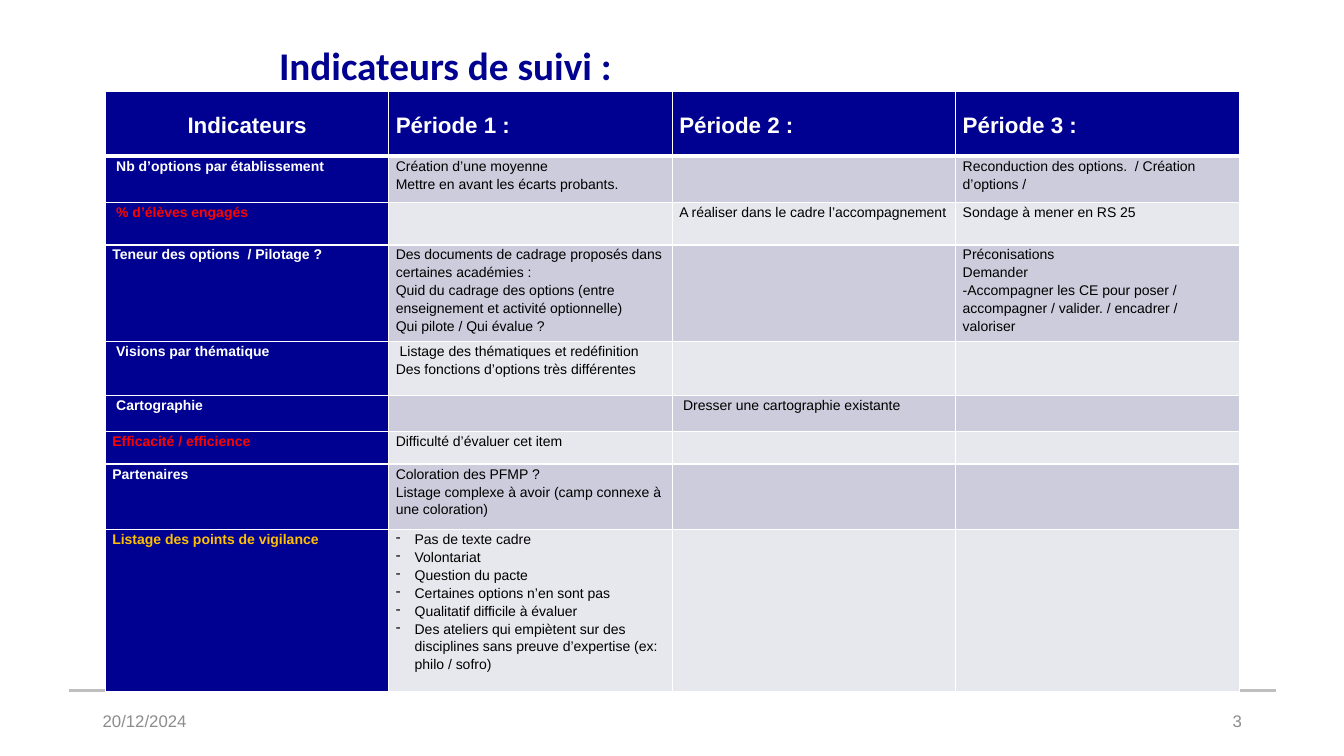
from dataclasses import dataclass

from lxml import etree
from pptx import Presentation
from pptx.dml.color import RGBColor
from pptx.enum import shapes, text
from pptx.oxml import ns
from pptx.util import Pt


@dataclass(frozen=True)
class Theme:
    """Colours, fonts and type sizes of the slide."""
    navy: str = "000091"
    white: str = "FFFFFF"
    black: str = "000000"
    red: str = "FF0000"
    amber: str = "FFC000"
    grey: str = "8C8C8C"
    rule: str = "BFBFBF"
    bands: tuple = ("CCCCDC", "E7E7EE")
    heading: str = "Calibri"
    body: str = "Arial"
    title_size: int = 28
    header_size: int = 16
    footer_size: int = 12
    cell_size: int = 10


THEME = Theme()
LEFT, CENTER, RIGHT = text.PP_ALIGN.LEFT, text.PP_ALIGN.CENTER, text.PP_ALIGN.RIGHT
TOP, MIDDLE = text.MSO_ANCHOR.TOP, text.MSO_ANCHOR.MIDDLE
COLUMN_WIDTH = 202.5
HEADERS = ["Indicateurs", "Période 1 :", "Période 2 :", "Période 3 :"]
HEADER_HEIGHT = 46
ROWS = [
    (33, THEME.white, " Nb d’options par établissement",
     {1: ["Création d’une moyenne", "Mettre en avant les écarts probants."],
      3: ["Reconduction des options.  / Création d’options /"]}),
    (30.5, THEME.red, " % d’élèves engagés",
     {2: ["A réaliser dans le cadre l’accompagnement"],
      3: ["Sondage à mener en RS 25"]}),
    (64, THEME.white, "Teneur des options  / Pilotage ?",
     {1: ["Des documents de cadrage proposés dans certaines académies :",
          "Quid du cadrage des options (entre enseignement et activité optionnelle)",
          "Qui pilote / Qui évalue ?"],
      3: ["Préconisations", "Demander",
          "-Accompagner les CE pour poser / accompagner / valider. / encadrer / valoriser"]}),
    (38.5, THEME.white, " Visions par thématique",
     {1: [" Listage des thématiques et redéfinition",
          "Des fonctions d’options très différentes"]}),
    (26, THEME.white, " Cartographie", {2: [" Dresser une cartographie existante"]}),
    (23, THEME.red, "Efficacité / efficience", {1: ["Difficulté d’évaluer cet item"]}),
    (46.5, THEME.white, "Partenaires",
     {1: ["Coloration des PFMP ?",
          "Listage complexe à avoir (camp connexe à une coloration)"]}),
    (116, THEME.amber, "Listage des points de vigilance",
     {1: ["Pas de texte cadre", "Volontariat", "Question du pacte",
          "Certaines options n’en sont pas", "Qualitatif difficile à évaluer",
          "Des ateliers qui empiètent sur des disciplines sans preuve d’expertise "
          "(ex: philo / sofro)"]}),
]


def add_bullet(para):
    """Give a paragraph a hanging dash."""
    properties = para._p.get_or_add_pPr()
    properties.set("marL", str(Pt(13.5)))
    properties.set("indent", str(-Pt(13.5)))
    etree.SubElement(properties, ns.qn("a:buChar")).set("char", "-")


def write(frame, lines, size, color, font=THEME.body, bold=False, align=LEFT,
          spacing=1.0, bullets=False):
    """Fill a text frame with one paragraph per line."""
    for index, line in enumerate(lines):
        para = frame.add_paragraph() if index else frame.paragraphs[0]
        para.text = line
        para.alignment = align
        para.line_spacing = spacing
        if bullets:
            add_bullet(para)
        para.font.name = font
        para.font.size = Pt(size)
        para.font.bold = bold
        para.font.color.rgb = RGBColor.from_string(color)


def add_text(page, left, top, width, height, line, size, color, **style):
    """Add a vertically centred one-line text box."""
    box = page.shapes.add_textbox(Pt(left), Pt(top), Pt(width), Pt(height))
    box.text_frame.word_wrap = True
    box.text_frame.vertical_anchor = MIDDLE
    write(box.text_frame, [line], size, color, **style)


def add_rule(page, left, right, y):
    """Draw the grey line above the footer."""
    rule = page.shapes.add_connector(
        shapes.MSO_CONNECTOR.STRAIGHT, Pt(left), Pt(y), Pt(right), Pt(y))
    rule.line.color.rgb = RGBColor.from_string(THEME.rule)
    rule.line.width = Pt(2.25)
    etree.SubElement(rule._element.spPr, ns.qn("a:effectLst"))


def style_cell(cell, fill, anchor=TOP, bottom=1):
    """Set the margins, white borders and fill of a cell."""
    cell.margin_left = cell.margin_right = Pt(5)
    cell.margin_top = cell.margin_bottom = Pt(0)
    cell.vertical_anchor = anchor
    properties = cell._tc.get_or_add_tcPr()
    for side, width in (("L", 1), ("R", 1), ("T", 1), ("B", bottom)):
        border = etree.SubElement(properties, ns.qn(f"a:ln{side}"), w=str(Pt(width)))
        paint = etree.SubElement(border, ns.qn("a:solidFill"))
        etree.SubElement(paint, ns.qn("a:srgbClr"), val=THEME.white)
    cell.fill.solid()
    cell.fill.fore_color.rgb = RGBColor.from_string(fill)


def add_indicators(page, left, top):
    """Add the table of indicators by period."""
    heights = [HEADER_HEIGHT] + [row[0] for row in ROWS]
    table = page.shapes.add_table(
        len(heights), len(HEADERS), Pt(left), Pt(top),
        Pt(COLUMN_WIDTH * len(HEADERS)), Pt(sum(heights))).table
    table.horz_banding = False
    for column in table.columns:
        column.width = Pt(COLUMN_WIDTH)
    for row, height in zip(table.rows, heights):
        row.height = Pt(height)
    for column, header in enumerate(HEADERS):
        cell = table.cell(0, column)
        style_cell(cell, THEME.navy, MIDDLE, bottom=3)
        write(cell.text_frame, [header], THEME.header_size, THEME.white, bold=True,
              align=LEFT if column else CENTER, spacing=1.15)
    for index, (_, color, label, notes) in enumerate(ROWS):
        name = table.cell(index + 1, 0)
        style_cell(name, THEME.navy, bottom=1)
        write(name.text_frame, [label], THEME.cell_size, color, bold=True, spacing=1.15)
        for column in range(1, len(HEADERS)):
            cell = table.cell(index + 1, column)
            style_cell(cell, THEME.bands[index % 2])
            write(cell.text_frame, notes.get(column, [""]), THEME.cell_size, THEME.black,
                  spacing=1.15, bullets=index == len(ROWS) - 1 and column in notes)


def main():
    """Build the slide and save it."""
    deck = Presentation()
    deck.slide_width, deck.slide_height = Pt(960), Pt(540)
    page = deck.slides.add_slide(deck.slide_layouts[6])
    add_rule(page, 49, 911.5, 493.2)
    add_text(page, 192.25, 14.4, 760, 68.4, "Indicateurs de suivi :", THEME.title_size,
             THEME.navy, font=THEME.heading, bold=True, spacing=0.9)
    add_text(page, 66.25, 500.4, 216, 28.8, "20/12/2024", THEME.footer_size, THEME.grey)
    add_text(page, 678.25, 500.4, 216, 28.8, "3", THEME.footer_size, THEME.grey, align=RIGHT)
    add_indicators(page, 75.25, 65.5)
    deck.save("out.pptx")


if __name__ == "__main__":
    main()
